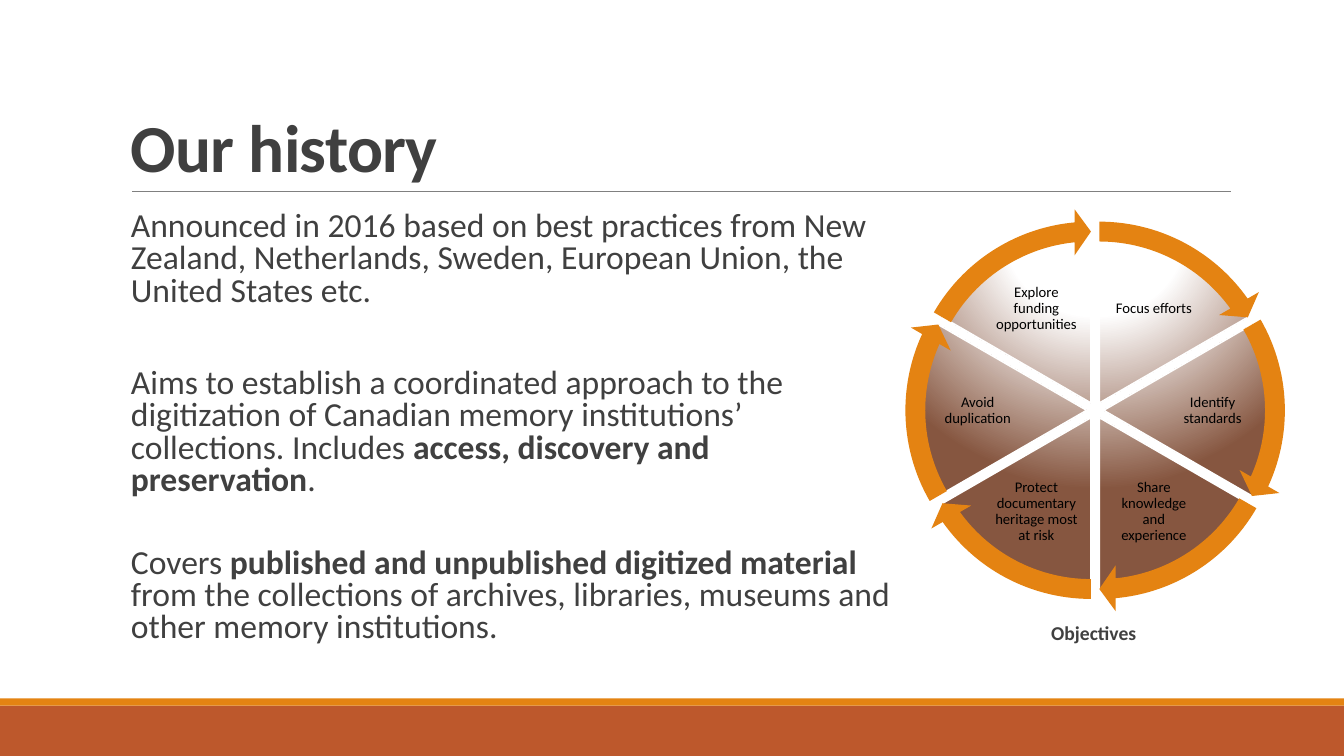
from collections import namedtuple
from dataclasses import dataclass
from math import cos, radians, sin

from lxml.etree import SubElement
from pptx import Presentation
from pptx.dml.color import RGBColor
from pptx.enum.shapes import MSO_CONNECTOR, MSO_SHAPE
from pptx.enum.text import MSO_ANCHOR, PP_ALIGN
from pptx.oxml import parse_xml
from pptx.oxml.ns import nsdecls, qn
from pptx.util import Cm, Pt

Box = namedtuple("Box", "left top width height")


@dataclass(frozen=True)
class Theme:
    font: str = "Calibri"
    text: str = "404040"
    label: str = "000000"
    rule: str = "808080"
    band: str = "BD582C"
    accent: str = "E48312"
    light: str = "FFFFFF"
    dark: str = "865640"
    title_size: float = 48
    body_size: float = 24
    caption_size: float = 14
    label_size: float = 10.5


THEME = Theme()

# Each paragraph: space before in points, then (text, bold) spans
HISTORY = [
    (0, [("Announced in 2016 based on best practices from New Zealand, Netherlands, "
          "Sweden, European Union, the United States etc.", False)]),
    (41, [("Aims to establish a coordinated approach to the digitization of Canadian "
           "memory institutions’ collections. Includes ", False),
          ("access, discovery and preservation", True), (".", False)]),
    (34, [("Covers ", False),
          ("published and unpublished digitized material ", True),
          ("from the collections of archives, libraries, museums and other memory "
           "institutions.", False)]),
]
# Clockwise from the top
OBJECTIVES = ["Focus efforts", "Identify standards", "Share knowledge and experience",
              "Protect documentary heritage most at risk", "Avoid duplication",
              "Explore funding opportunities"]


def place(box):
    return [Cm(length) for length in box]


def centred(x, y, width, height):
    return Box(x - width / 2, y - height / 2, width, height)


def add_text(shapes, box, paragraphs, size, color=THEME.text, align=PP_ALIGN.LEFT,
             anchor=MSO_ANCHOR.TOP, insets=(0.25, 0.13), indent=0, line_spacing=1.0,
             letter_spacing=None, wrap=True):
    """Add a text box; paragraphs are (space before, [(text, bold), ...])."""
    frame = shapes.add_textbox(*place(box)).text_frame
    frame.word_wrap = wrap
    frame.vertical_anchor = anchor
    frame.margin_left = frame.margin_right = Cm(insets[0])
    frame.margin_top = frame.margin_bottom = Cm(insets[1])
    for number, (space_before, spans) in enumerate(paragraphs):
        para = frame.add_paragraph() if number else frame.paragraphs[0]
        para.alignment = align
        para.line_spacing = line_spacing
        para.space_before = Pt(space_before)
        para.space_after = Pt(2 if len(paragraphs) > 1 else 0)
        if indent:
            para._p.get_or_add_pPr().set("marL", str(Cm(indent)))
        for text, bold in spans:
            span = para.add_run()
            span.text = text
            span.font.name = THEME.font
            span.font.size = Pt(size)
            span.font.bold = bold
            span.font.color.rgb = RGBColor.from_string(color)
            if letter_spacing:
                span.font._element.set("spc", str(round(letter_spacing * 100)))


def add_solid(shapes, kind, box, color, adjustments=()):
    shape = shapes.add_shape(kind, *place(box))
    shape.shadow.inherit = False
    shape.fill.solid()
    shape.fill.fore_color.rgb = RGBColor.from_string(color)
    shape.line.fill.background()
    for index, value in enumerate(adjustments):
        shape.adjustments[index] = value
    return shape


def fill_radial(shape):
    """Swap the solid fill for a circular gradient centred above the shape."""
    stops = "".join(
        f'<a:gs pos="{percent * 1000}"><a:srgbClr val="{color}"/></a:gs>'
        for percent, color in [(0, THEME.light), (35, THEME.light), (100, THEME.dark)])
    gradient = parse_xml(
        f'<a:gradFill {nsdecls("a")} rotWithShape="1"><a:gsLst>{stops}</a:gsLst>'
        '<a:path path="circle"><a:fillToRect l="50000" t="-80000" r="50000" b="180000"/>'
        '</a:path></a:gradFill>')
    properties = shape._element.spPr
    properties.replace(properties.find(qn("a:solidFill")), gradient)


def draw_footer(page, box):
    stripe = 0.18
    add_solid(page.shapes, MSO_SHAPE.RECTANGLE,
              Box(box.left, box.top + stripe, box.width, box.height - stripe), THEME.band)
    add_solid(page.shapes, MSO_SHAPE.RECTANGLE, box._replace(height=stripe), THEME.accent)


def draw_title(page, box):
    bottom = box.top + box.height
    rule = page.shapes.add_connector(
        MSO_CONNECTOR.STRAIGHT, Cm(box.left + 0.28), Cm(bottom),
        Cm(box.left + box.width + 0.02), Cm(bottom))
    rule.line.color.rgb = RGBColor.from_string(THEME.rule)
    rule.line.width = Pt(0.5)
    SubElement(rule._element.spPr, qn("a:effectLst"))
    add_text(page.shapes, box, [(0, [("Our history", True)])], THEME.title_size,
             anchor=MSO_ANCHOR.BOTTOM, line_spacing=0.85, letter_spacing=-0.5)


def draw_history(page, box):
    add_text(page.shapes, box, HISTORY, THEME.body_size, insets=(0, 0.13),
             indent=0.25, line_spacing=0.8)


def draw_wheel(page, box):
    """Six slices pushed out from the centre, each with a label and an arrow."""
    group = page.shapes.add_group_shape()
    centre_x, centre_y = box.left + box.width / 2, box.top + box.height / 2
    pie_size, push, label_radius = box.width - 1.06, 0.21, 2.96
    full_turn = 216  # adjustment units in 360 degrees
    step, head = full_turn / len(OBJECTIVES), 3.275
    arrows = []
    for number, objective in enumerate(OBJECTIVES):
        start = (162 + number * step) % full_turn
        end = (start + step) % full_turn
        middle = radians((start + step / 2) * 360 / full_turn)
        x, y = centre_x + push * cos(middle), centre_y + push * sin(middle)
        # Slice
        piece = add_solid(group.shapes, MSO_SHAPE.PIE,
                          centred(x, y, pie_size, pie_size), THEME.light, (start, end))
        fill_radial(piece)
        piece.line.color.rgb = RGBColor.from_string(THEME.light)
        piece.line.width = Pt(1.25)
        # Label
        label = centred(centre_x + label_radius * cos(middle),
                        centre_y + label_radius * sin(middle), 2.29, 1.78)
        add_text(group.shapes, label, [(0, [(objective, False)])], THEME.label_size,
                 color=THEME.label, align=PP_ALIGN.CENTER, anchor=MSO_ANCHOR.MIDDLE,
                 insets=(0.05, 0.05), line_spacing=0.9)
        arrows.append((centred(x, y, box.width, box.width),
                       (0.051, head, (end - head) % full_turn, start, 0.059)))
    # Arrows lie above all slices
    for arrow_box, adjustments in arrows:
        add_solid(group.shapes, MSO_SHAPE.CIRCULAR_ARROW, arrow_box, THEME.accent,
                  adjustments)


def draw_caption(page, box):
    add_text(page.shapes, box, [(0, [("Objectives", True)])], THEME.caption_size,
             wrap=False)


def main():
    deck = Presentation()
    deck.slide_width, deck.slide_height = Cm(33.87), Cm(19.05)
    page = deck.slides.add_slide(deck.slide_layouts[6])
    draw_footer(page, Box(0, 17.6, 33.87, 1.45))
    draw_title(page, Box(3.05, 0.79, 27.94, 4.04))
    draw_history(page, Box(3.05, 5.21, 19.63, 11.46))
    draw_caption(page, Box(26.24, 15.52, 2.69, 0.86))
    draw_wheel(page, Box(22.7, 5.44, 9.8, 9.8))
    deck.save("out.pptx")


if __name__ == "__main__":
    main()
